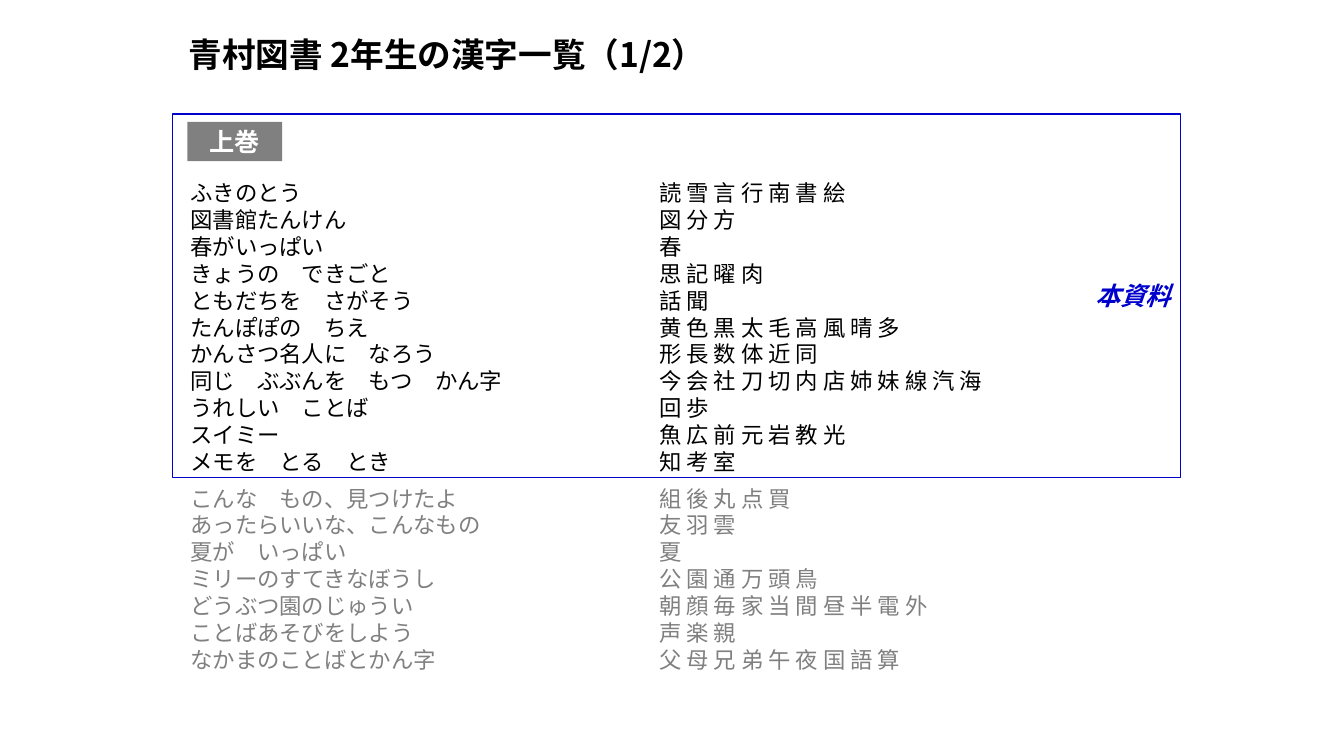
from lxml.etree import SubElement
from pptx import Presentation
from pptx.dml.color import RGBColor
from pptx.enum.shapes import MSO_SHAPE as Shape
from pptx.enum.text import MSO_ANCHOR as Anchor, PP_ALIGN as Align
from pptx.oxml.ns import qn
from pptx.util import Inches, Pt

FONT = "Noto Sans CJK JP"
BLACK, GRAY, WHITE, BLUE = "000000", "808080", "FFFFFF", "0000CC"
TITLE = "青村図書 2年生の漢字一覧（1/2）"

COVERED_UNITS = [
    ("ふきのとう", "読雪言行南書絵"),
    ("図書館たんけん", "図分方"),
    ("春がいっぱい", "春"),
    ("きょうの　できごと", "思記曜肉"),
    ("ともだちを　さがそう", "話聞"),
    ("たんぽぽの　ちえ", "黄色黒太毛高風晴多"),
    ("かんさつ名人に　なろう", "形長数体近同"),
    ("同じ　ぶぶんを　もつ　かん字", "今会社刀切内店姉妹線汽海"),
    ("うれしい　ことば", "回歩"),
    ("スイミー", "魚広前元岩教光"),
    ("メモを　とる　とき", "知考室"),
]
LATER_UNITS = [
    ("こんな　もの、見つけたよ", "組後丸点買"),
    ("あったらいいな、こんなもの", "友羽雲"),
    ("夏が　いっぱい", "夏"),
    ("ミリーのすてきなぼうし", "公園通万頭鳥"),
    ("どうぶつ園のじゅうい", "朝顔毎家当間昼半電外"),
    ("ことばあそびをしよう", "声楽親"),
    ("なかまのことばとかん字", "父母兄弟午夜国語算"),
]


def color(hex_code):
    return RGBColor.from_string(hex_code)


def write(paragraph, text, size, ink=BLACK, bold=False, italic=False, align=Align.LEFT):
    paragraph.alignment = align
    run = paragraph.add_run()
    run.text = text
    font = run.font
    font.name, font.size, font.bold, font.italic = FONT, Pt(size), bold, italic
    font.color.rgb = color(ink)
    SubElement(font._element, qn("a:ea")).set("typeface", FONT)


def add_tab_stop(paragraph, position):
    tabs = SubElement(paragraph._p.get_or_add_pPr(), qn("a:tabLst"))
    tab = SubElement(tabs, qn("a:tab"))
    tab.set("pos", str(Inches(position)))
    tab.set("algn", "l")


def add_box(slide, box, fill=None, line=None):
    rectangle = slide.shapes.add_shape(Shape.RECTANGLE, *map(Inches, box))
    rectangle.shadow.inherit = False
    if fill:
        rectangle.fill.solid()
        rectangle.fill.fore_color.rgb = color(fill)
    else:
        rectangle.fill.background()
    if line:
        rectangle.line.color.rgb = color(line)
        rectangle.line.width = Pt(1)
    else:
        rectangle.line.fill.background()
    rectangle.text_frame.vertical_anchor = Anchor.MIDDLE
    return rectangle.text_frame.paragraphs[0]


def add_title(slide, box):
    title = slide.shapes.title
    title.left, title.top, title.width, title.height = map(Inches, box)
    title.text_frame.vertical_anchor = Anchor.MIDDLE
    write(title.text_frame.paragraphs[0], TITLE, 24, bold=True)


def add_volume_frame(slide, box):
    """Frame the units that this document covers, with the volume's badge."""
    left, top, width, height = box
    badge = add_box(slide, (left + 0.15, top + 0.08, 0.94, 0.39), fill=GRAY)
    write(badge, "上巻", 18, WHITE, bold=True, align=Align.CENTER)
    frame = add_box(slide, box, line=BLUE)
    write(frame, "本資料", 18, BLUE, bold=True, italic=True, align=Align.RIGHT)


def add_unit_list(slide, box):
    unit_list = slide.shapes.add_textbox(*map(Inches, box)).text_frame
    unit_list.word_wrap = True
    for index, (unit, kanji) in enumerate(COVERED_UNITS + LATER_UNITS):
        later = index >= len(COVERED_UNITS)
        row = unit_list.add_paragraph() if index else unit_list.paragraphs[0]
        row.line_spacing = Pt(19.2)
        row.space_before = Pt(7 if index == len(COVERED_UNITS) else 0)
        add_tab_stop(row, 4.65)
        write(row, f"{unit}\t{' '.join(kanji)}", 16, GRAY if later else BLACK)


def main():
    deck = Presentation()
    deck.slide_width, deck.slide_height = Inches(13.33), Inches(7.5)
    slide = deck.slides.add_slide(deck.slide_layouts[5])
    add_title(slide, (1.77, 0.28, 9.69, 0.51))
    add_unit_list(slide, (1.79, 1.73, 9.56, 5.22))
    add_volume_frame(slide, (1.71, 1.13, 10, 3.61))
    deck.save("out.pptx")


if __name__ == "__main__":
    main()
